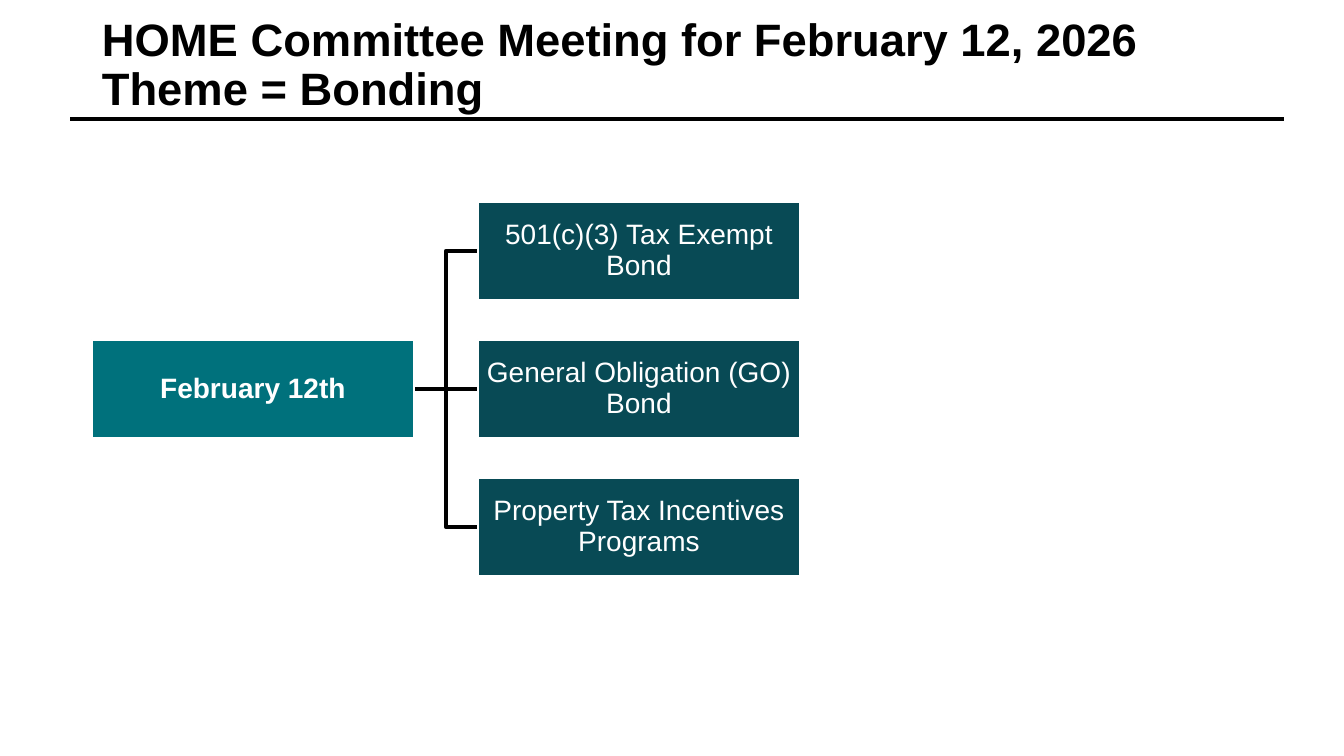
from lxml import etree
from pptx import Presentation
from pptx.dml.color import RGBColor
from pptx.enum import shapes, text
from pptx.oxml.ns import qn

TITLE = "HOME Committee Meeting for February 12, 2026\vTheme = Bonding"
MEETING = "February 12th"
TOPICS = [
    "501(c)(3) Tax Exempt Bond",
    "General Obligation (GO) Bond",
    "Property Tax Incentives Programs",
]

BLACK = RGBColor(0x00, 0x00, 0x00)
WHITE = RGBColor(0xFF, 0xFF, 0xFF)
TEAL = RGBColor(0x00, 0x71, 0x7C)
DARK_TEAL = RGBColor(0x08, 0x4A, 0x55)
FONT = "Arial"

# Lengths in px, 100.8 px to the inch
SLIDE_W, SLIDE_H = 1344, 756
BOX_W, BOX_H = 322, 98
MEETING_X, TOPIC_X = 92, 478
TOPIC_TOP, PITCH = 202, 138
RIGHT_SITE, LEFT_SITE = 3, 1


def px(n):
    return round(n * 914400 / 100.8)


def pt(n):
    return round(n * 12700)


def style_text(p, content, size, color, bold):
    p.text = content
    p.line_spacing = 0.9
    p.font.name = FONT
    p.font.size = pt(size)
    p.font.bold = bold
    p.font.color.rgb = color


def add_line(slide, kind, x1, y1, x2, y2):
    line = slide.shapes.add_connector(kind, px(x1), px(y1), px(x2), px(y2))
    line.line.color.rgb = BLACK
    line.line.width = pt(3)
    etree.SubElement(line._element.spPr, qn("a:effectLst"))
    return line


def add_box(slide, x, y, label, fill, bold=False):
    sp = slide.shapes.add_shape(
        shapes.MSO_SHAPE.RECTANGLE, px(x), px(y), px(BOX_W), px(BOX_H))
    sp.shadow.inherit = False
    sp.fill.solid()
    sp.fill.fore_color.rgb = fill
    sp.line.color.rgb = WHITE
    sp.line.width = pt(1.5)
    tf = sp.text_frame
    tf.word_wrap = True
    tf.vertical_anchor = text.MSO_ANCHOR.MIDDLE
    tf.margin_left = tf.margin_right = tf.margin_top = tf.margin_bottom = px(1)
    p = tf.paragraphs[0]
    style_text(p, label, 20, WHITE, bold)
    p.alignment = text.PP_ALIGN.CENTER
    return sp


def add_title(slide):
    tf = slide.shapes.add_textbox(px(92), px(54), px(1159), px(66)).text_frame
    tf.word_wrap = True
    tf.vertical_anchor = text.MSO_ANCHOR.BOTTOM
    style_text(tf.paragraphs[0], TITLE, 32.4, BLACK, True)


def add_tree(slide):
    tops = [TOPIC_TOP + i * PITCH for i in range(len(TOPICS))]
    meeting_y = sum(tops) / len(tops)
    middle = meeting_y + BOX_H / 2
    links = []
    for top in tops:
        kind = (shapes.MSO_CONNECTOR.STRAIGHT if top == meeting_y
                else shapes.MSO_CONNECTOR.ELBOW)
        links.append(add_line(slide, kind, MEETING_X + BOX_W, middle,
                              TOPIC_X, top + BOX_H / 2))
    meeting = add_box(slide, MEETING_X, meeting_y, MEETING, TEAL, bold=True)
    for label, top, link in zip(TOPICS, tops, links):
        topic = add_box(slide, TOPIC_X, top, label, DARK_TEAL)
        link.begin_connect(meeting, RIGHT_SITE)
        link.end_connect(topic, LEFT_SITE)


def main():
    prs = Presentation()
    prs.slide_width, prs.slide_height = px(SLIDE_W), px(SLIDE_H)
    slide = prs.slides.add_slide(prs.slide_layouts[6])
    add_line(slide, shapes.MSO_CONNECTOR.STRAIGHT, 1284, 119, 70, 119)
    add_title(slide)
    add_tree(slide)
    prs.save("out.pptx")


if __name__ == "__main__":
    main()
